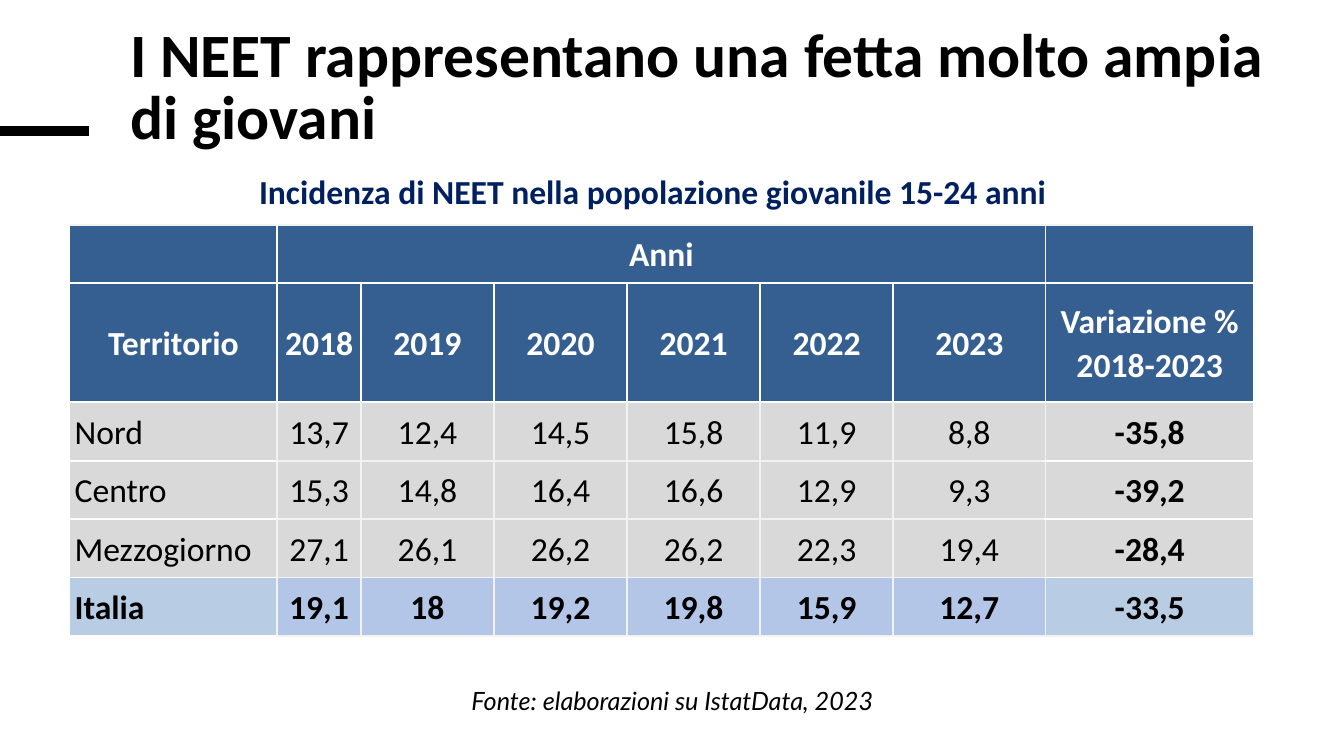
from lxml import etree
from pptx import Presentation
from pptx.dml.color import RGBColor
from pptx.enum.shapes import MSO_CONNECTOR
from pptx.enum.text import MSO_ANCHOR, MSO_AUTO_SIZE, PP_ALIGN
from pptx.oxml.ns import qn
from pptx.util import Pt

LEFT, MID, JUST = PP_ALIGN.LEFT, PP_ALIGN.CENTER, PP_ALIGN.JUSTIFY
MIDDLE, NO_FIT = MSO_ANCHOR.MIDDLE, MSO_AUTO_SIZE.NONE
STRAIGHT = MSO_CONNECTOR.STRAIGHT
PX = 9144  # 100 px to the inch

COLORS = {
    "black": "000000", "white": "FFFFFF", "navy": "002060", "blue": "365F91",
    "grey": "D9D9D9", "pale": "F2F2F2", "sky": "B8CCE4", "lilac": "B4C6E7",
}
HEADS = [
    ["", "Anni", "", "", "", "", "", ""],
    ["Territorio", "2018", "2019", "2020", "2021", "2022", "2023",
     "Variazione % 2018-2023"],
]
DATA = [
    ["Nord", "13,7", "12,4", "14,5", "15,8", "11,9", "8,8", "-35,8"],
    ["Centro", "15,3", "14,8", "16,4", "16,6", "12,9", "9,3", "-39,2"],
    ["Mezzogiorno", "27,1", "26,1", "26,2", "26,2", "22,3", "19,4", "-28,4"],
    ["Italia", "19,1", "18", "19,2", "19,8", "15,9", "12,7", "-33,5"],
]
WIDTHS = [206, 83, 132, 132, 132, 132, 151, 207]
HEIGHTS = [58, 118, 58, 58, 58, 58]


def rgb(name):
    return RGBColor.from_string(COLORS[name])


class Page:
    def __init__(self, deck):
        self.slide = deck.slides.add_slide(deck.slide_layouts[5])
        self.font = "Calibri"

    def words(self, frame, text, align, color, para=None, **font):
        item = frame.paragraphs[0]
        item.alignment = align
        for key, value in (para or {}).items():
            setattr(item, key, value)
        run = item.add_run()
        run.text = text
        run.font.color.rgb = rgb(color)
        for key, value in ({"name": self.font, "size": Pt(24)} | font).items():
            setattr(run.font, key, value)

    def title(self, text, *box):
        shape = self.slide.shapes.title
        for key, value in zip(("left", "top", "width", "height"), box):
            setattr(shape, key, value * PX)
        frame = shape.text_frame
        frame.auto_size, frame.vertical_anchor = NO_FIT, MIDDLE
        self.words(frame, text, LEFT, "black", {"line_spacing": 0.85},
                   size=Pt(44), bold=True)

    def label(self, text, box, color, para=None, **font):
        shape = self.slide.shapes.add_textbox(*(n * PX for n in box))
        shape.text_frame.word_wrap = True
        self.words(shape.text_frame, text, MID, color, para, **font)

    def rule(self, *ends):
        line = self.slide.shapes.add_connector(STRAIGHT, *(n * PX for n in ends))
        line.line.color.rgb = rgb("black")
        line.line.width = Pt(6.75)
        etree.SubElement(line._element.spPr, qn("a:effectLst"))

    def edge(self, cell, tag, color):
        props = cell._tc.get_or_add_tcPr()
        line = etree.SubElement(props, qn("a:" + tag), w=str(Pt(1.5)))
        fill = etree.SubElement(line, qn("a:solidFill"))
        etree.SubElement(fill, qn("a:srgbClr"), val=COLORS[color])

    def cell(self, cell, text, align, fill, color, bold, edges):
        for tag, tone in edges.items():
            self.edge(cell, tag, tone)
        cell.fill.solid()
        cell.fill.fore_color.rgb = rgb(fill)
        form = {"vertical_anchor": MIDDLE, "margin_left": 5 * PX,
                "margin_right": 5 * PX, "margin_top": 0, "margin_bottom": 0}
        for key, value in form.items():
            setattr(cell, key, value)
        if text:
            self.words(cell.text_frame, text, align, color,
                       {"line_spacing": 1.07}, bold=bold)

    def table(self, left, top):
        rows = HEADS + DATA
        size = (left, top, sum(WIDTHS), sum(HEIGHTS))
        grid = self.slide.shapes.add_table(
            len(rows), len(WIDTHS), *(n * PX for n in size)).table
        for col, width in zip(grid.columns, WIDTHS):
            col.width = width * PX
        for row, height in zip(grid.rows, HEIGHTS):
            row.height = height * PX
        grid.cell(0, 1).merge(grid.cell(0, 6))
        last, end = len(rows) - 1, len(WIDTHS) - 1
        for r, row in enumerate(rows):
            for c, text in enumerate(row):
                head, side = r < len(HEADS), c in (0, end)
                total = r == last
                fill = ("blue" if head else "grey" if not total
                        else "sky" if side else "lilac")
                align = MID if head or c else JUST if total else LEFT
                edges = {"lnL": upright(c, head, end),
                         "lnR": upright(c + 1, head, end),
                         "lnT": level(r, c, side, last),
                         "lnB": level(r + 1, c, side, last)}
                self.cell(grid.cell(r, c), text, align, fill,
                          "white" if head else "black",
                          head or total or c == end, edges)


def upright(x, head, end):
    white = x != end if head else x in (0, end + 1)
    return "white" if white else "pale"


def level(y, col, side, last):
    if y == 0 or (y > last and col):
        return "pale"
    return "white" if side or y <= len(HEADS) else "pale"


def main():
    deck = Presentation()
    deck.slide_width, deck.slide_height = 1333 * PX, 750 * PX
    page = Page(deck)

    # Heading and side rule
    page.rule(0, 130, 88, 130)
    page.title("I NEET rappresentano una fetta molto ampia di giovani",
               119, 18, 1186, 142)

    # Table with its caption
    page.table(69, 223)
    page.label("Incidenza di NEET nella popolazione giovanile 15-24 anni",
               (201, 165, 893, 50), "navy", {"space_after": Pt(10)}, bold=True)

    # Source line
    page.label("Fonte: elaborazioni su IstatData, 2023",
               (409, 675, 516, 40), "black", name="Lato", size=Pt(18),
               italic=True)
    deck.save("out.pptx")


if __name__ == "__main__":
    main()
